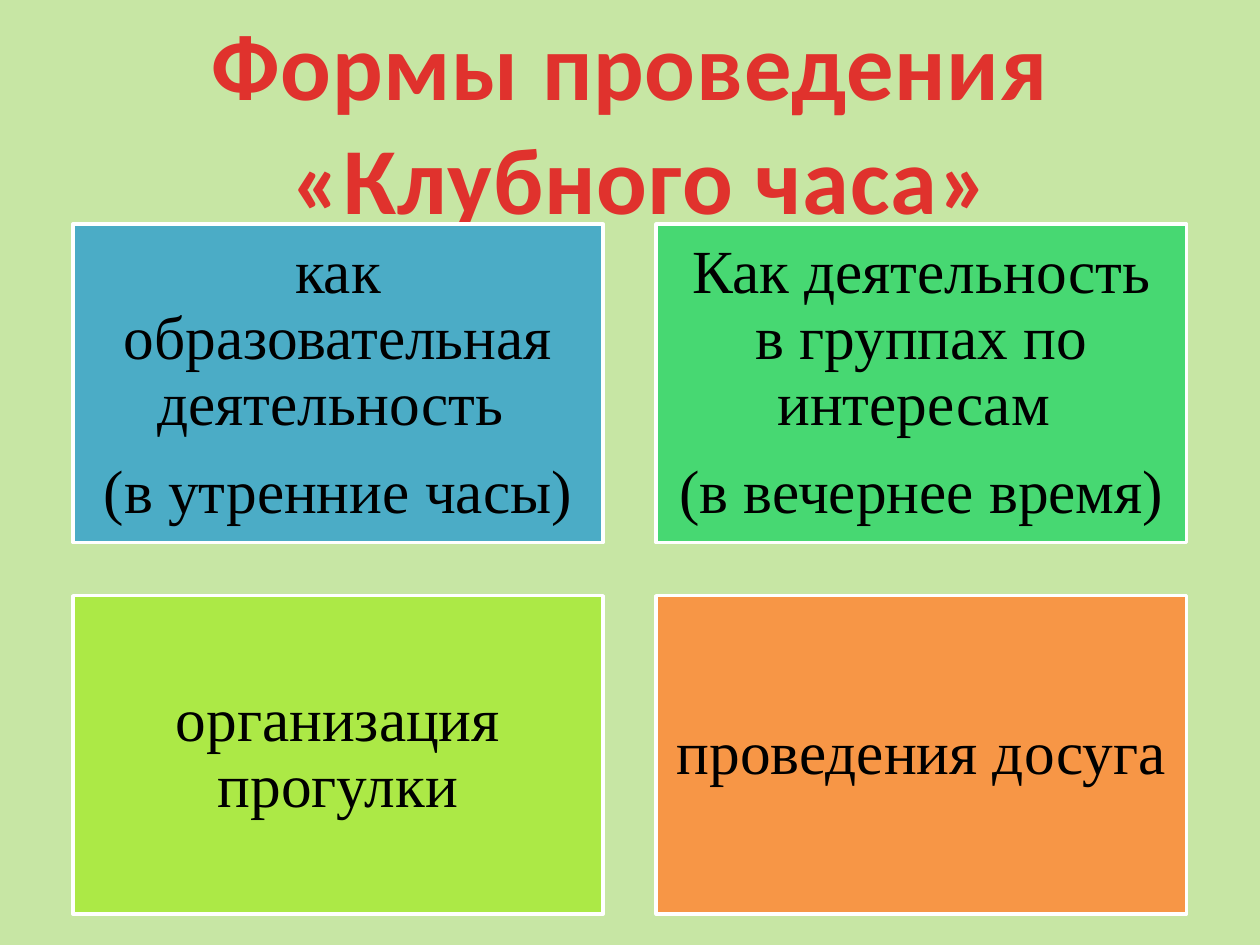
from dataclasses import dataclass

from pptx import Presentation
from pptx.dml.color import RGBColor
from pptx.enum import shapes, text
from pptx.util import Cm, Pt

COLORS = {
    "background": "C7E6A4",
    "title": "E0322D",
    "border": "FFFFFF",
    "text": "000000",
    "blue": "4BACC6",
    "green": "47D872",
    "lime": "ACE946",
    "orange": "F79646",
}

# Card grid, in centimetres
LEFT, TOP = 1.47, 4.52
WIDTH, HEIGHT, GAP = 10.69, 6.42, 1.07
COLUMNS = 2


@dataclass
class Card:
    color: str
    lines: list[str]


CARDS = [
    Card("blue", ["как образовательная деятельность ", "(в утренние часы)"]),
    Card("green", ["Как деятельность в группах по интересам ", "(в вечернее время)"]),
    Card("lime", ["организация прогулки"]),
    Card("orange", ["проведения досуга"]),
]


def rgb(name: str) -> RGBColor:
    return RGBColor.from_string(COLORS[name])


def write_lines(frame, lines: list[str], font_name: str, size: float, color: str) -> None:
    """Fill a text frame with centred paragraphs in one font."""
    frame.text = "\n".join(lines)
    for paragraph in frame.paragraphs:
        paragraph.alignment = text.PP_ALIGN.CENTER
        paragraph.font.name = font_name
        paragraph.font.size = Pt(size)
        paragraph.font.color.rgb = rgb(color)


def draw_title(slide, lines: list[str]) -> None:
    shape = slide.shapes.add_textbox(0, 0, Cm(25.4), Cm(4.72))
    frame = shape.text_frame
    frame.word_wrap = True
    write_lines(frame, lines, "Calibri", 54, "title")
    for paragraph in frame.paragraphs:
        paragraph.font.bold = True
        for run in paragraph.runs:
            run._r.get_or_add_rPr().set("spc", "50")  # letter spacing, 0.5 pt


def draw_card(slide, card: Card, row: int, column: int) -> None:
    shape = slide.shapes.add_shape(
        shapes.MSO_SHAPE.RECTANGLE,
        Cm(LEFT + column * (WIDTH + GAP)),
        Cm(TOP + row * (HEIGHT + GAP)),
        Cm(WIDTH),
        Cm(HEIGHT),
    )
    shape.shadow.inherit = False
    shape.fill.solid()
    shape.fill.fore_color.rgb = rgb(card.color)
    shape.line.color.rgb = rgb("border")
    shape.line.width = Pt(2)

    frame = shape.text_frame
    frame.word_wrap = True
    frame.vertical_anchor = text.MSO_ANCHOR.MIDDLE
    frame.margin_left = frame.margin_right = Cm(0.37)
    frame.margin_top = frame.margin_bottom = Cm(0.37)
    write_lines(frame, card.lines, "Times New Roman", 35, "text")
    for paragraph in frame.paragraphs:
        paragraph.line_spacing = 0.9
        paragraph.space_after = Pt(12)


def main() -> None:
    presentation = Presentation()
    presentation.slide_width, presentation.slide_height = Cm(25.4), Cm(19.05)
    slide = presentation.slides.add_slide(presentation.slide_layouts[6])

    # Background
    slide.background.fill.solid()
    slide.background.fill.fore_color.rgb = rgb("background")

    # Title, partly covered by the cards
    draw_title(slide, ["Формы проведения", " «Клубного часа»"])

    # Cards
    for index, card in enumerate(CARDS):
        draw_card(slide, card, *divmod(index, COLUMNS))

    presentation.save("out.pptx")


if __name__ == "__main__":
    main()
